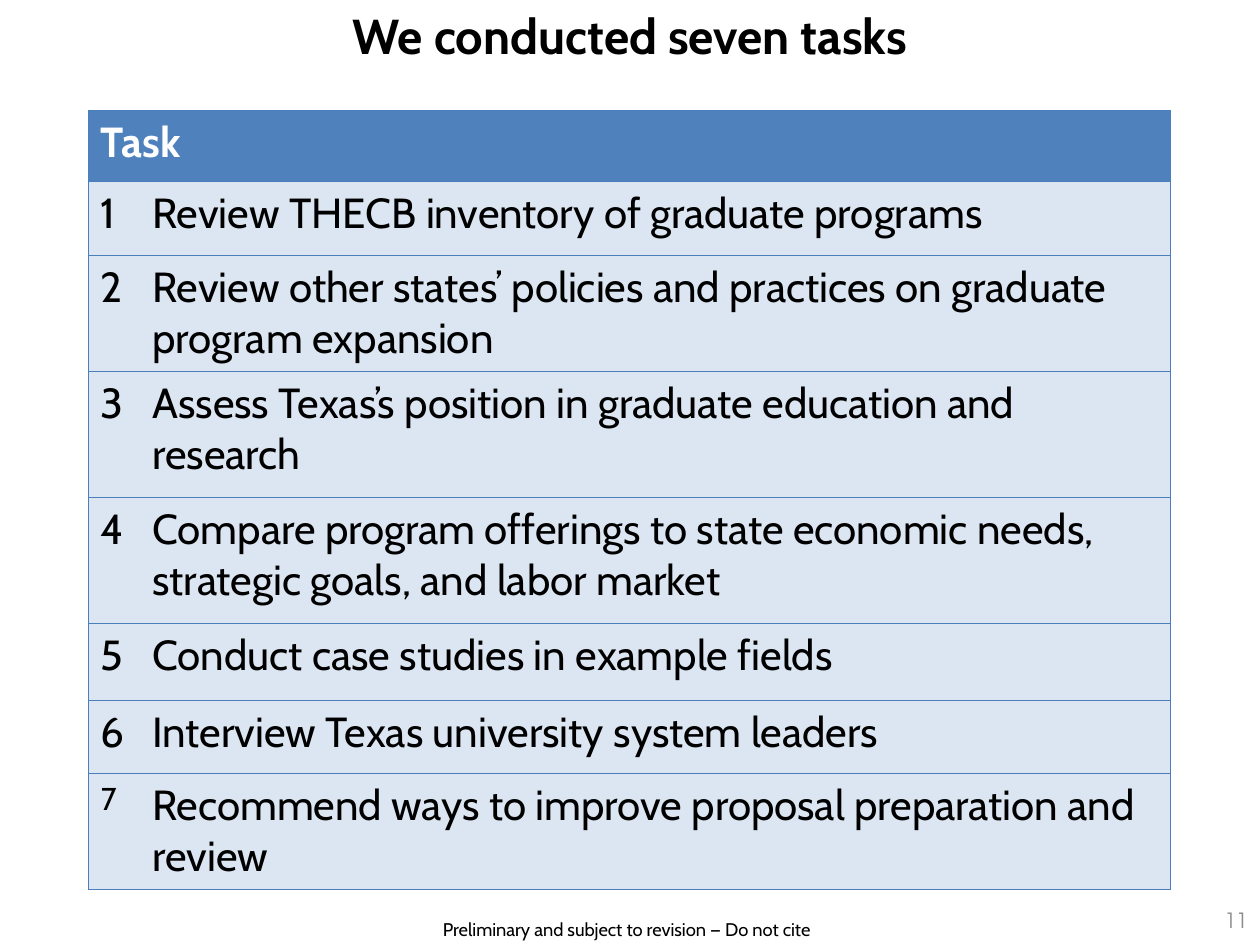
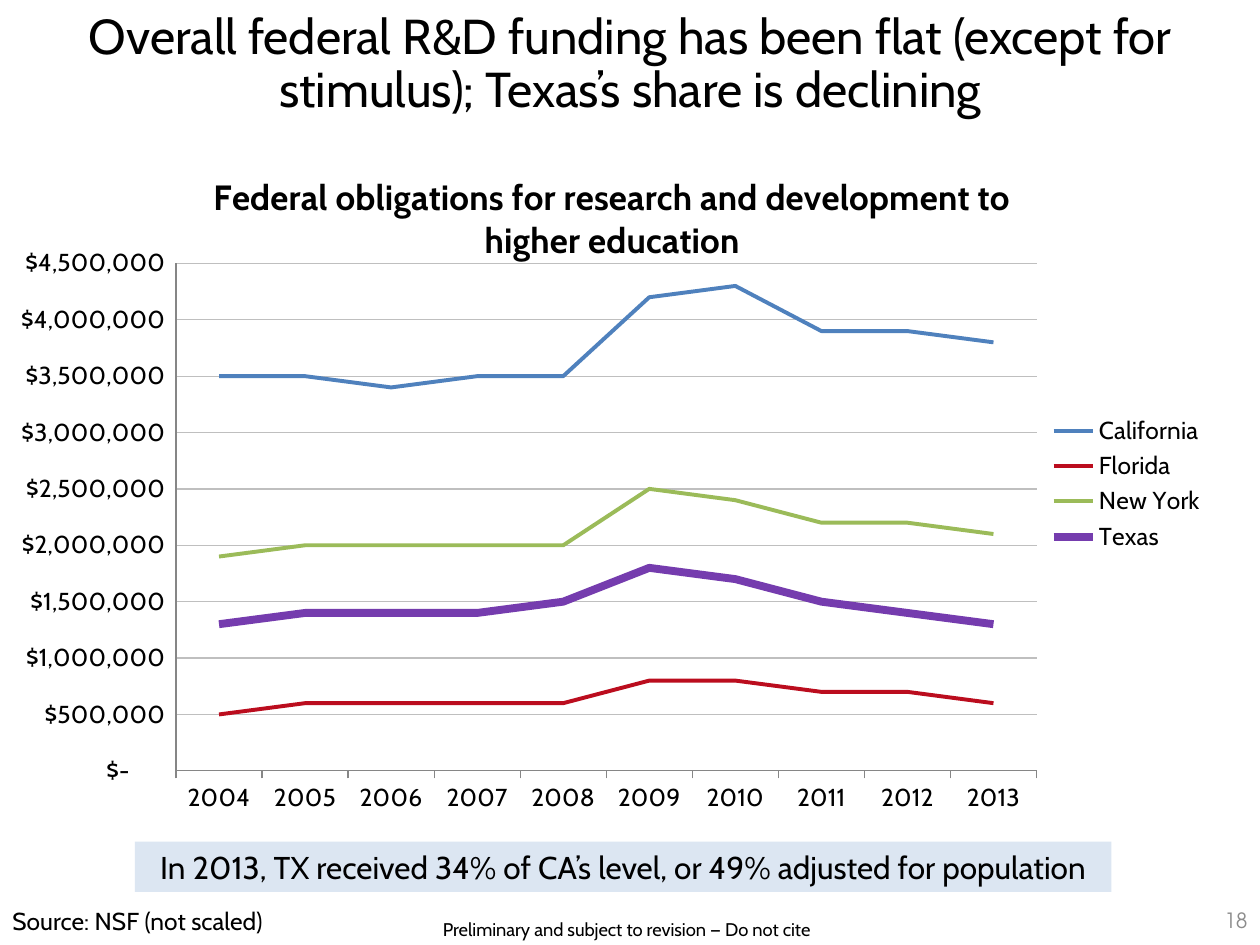
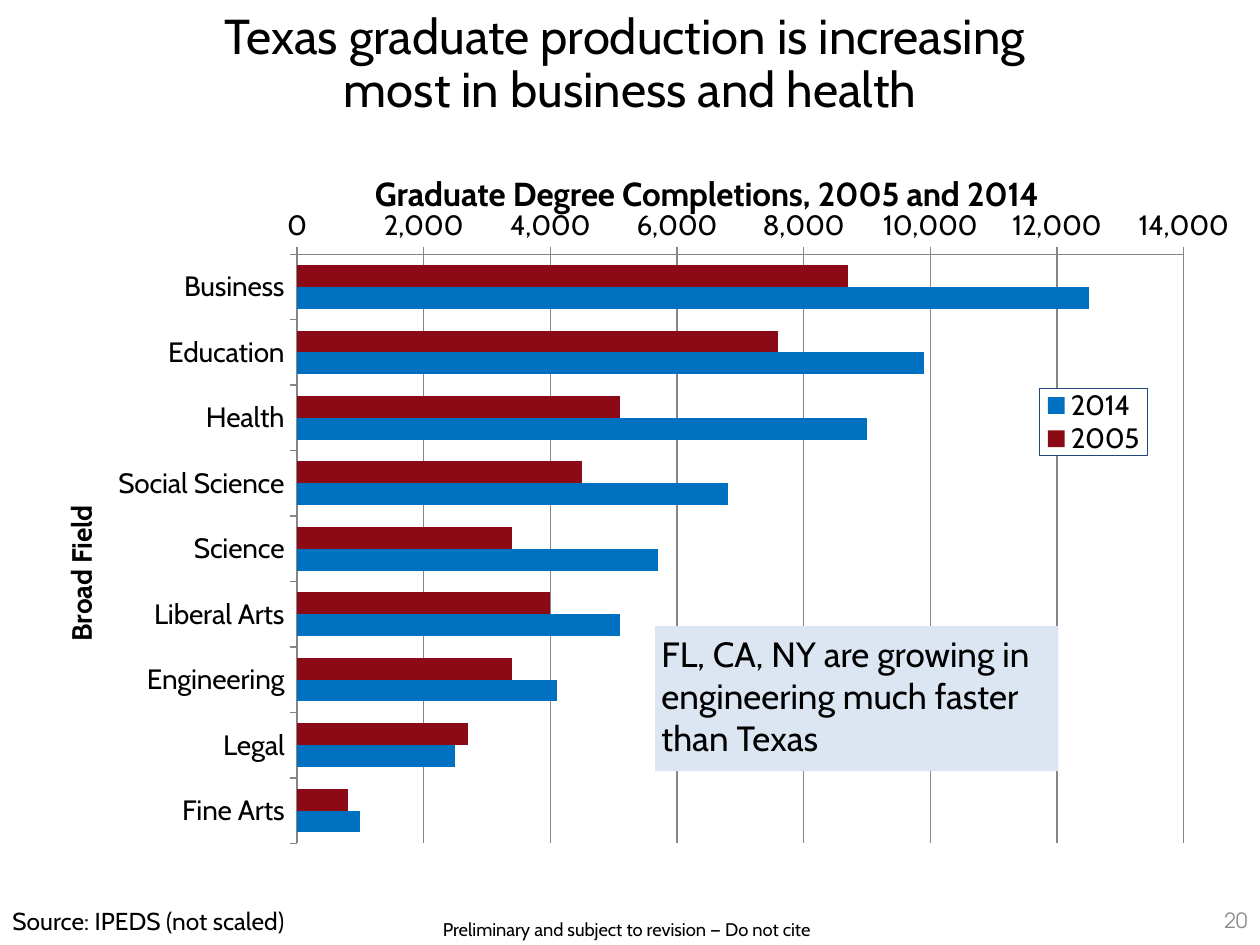
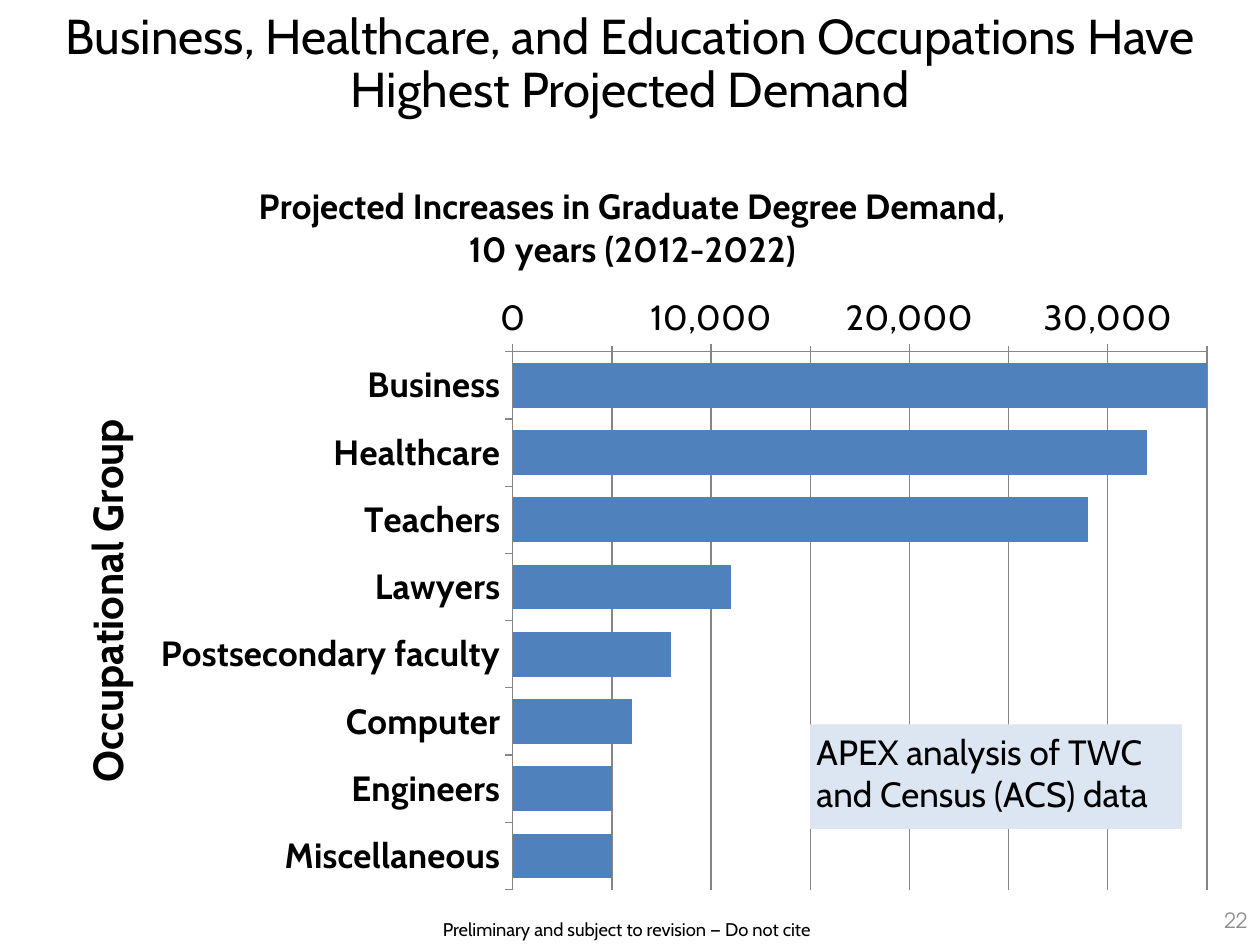
from copy import deepcopy
from dataclasses import dataclass

from pptx import Presentation
from pptx.chart.data import CategoryChartData
from pptx.dml.color import RGBColor
from pptx.enum.chart import XL_AXIS_CROSSES, XL_CHART_TYPE, XL_LEGEND_POSITION, XL_TICK_MARK
from pptx.enum.text import MSO_ANCHOR, PP_ALIGN
from pptx.oxml import parse_xml
from pptx.oxml.ns import qn, nsdecls
from pptx.util import Inches, Pt


@dataclass(frozen=True)
class Theme:
    font: str = "Cabin"
    number_font: str = "TeX Gyre Adventor"
    black: str = "000000"
    white: str = "FFFFFF"
    blue: str = "4F81BD"
    pale_blue: str = "DCE6F2"
    border: str = "4B7EBC"
    red: str = "BB0D1E"
    green: str = "9BBB59"
    purple: str = "753CAE"
    dark_red: str = "8C0A16"
    bright_blue: str = "0070C0"
    legend_border: str = "1F497D"
    number_grey: str = "8C8C8C"
    grid_light: str = "BFBFBF"
    grid_dark: str = "868686"
    title_size: float = 28
    table_size: float = 24
    callout_size: float = 20
    note_size: float = 18
    source_size: float = 14
    number_size: float = 12
    footer_size: float = 10.5


THEME = Theme()
FOOTER = "Preliminary and subject to revision — Do not cite"
DOLLARS = '_("$"* #,##0_);_("$"* \\(#,##0\\);_("$"* "-"??_);_(@_)'

TASKS = [
    # text, row height, number size
    ("Review THECB inventory of graduate programs", 0.59, 24),
    ("Review other states’ policies and practices on graduate program expansion", 0.92, 24),
    ("Assess Texas’s position in graduate education and research", 1, 24),
    ("Compare program offerings to state economic needs, strategic goals, and labor market", 1, 24),
    ("Conduct case studies in example fields", 0.61, 24),
    ("Interview Texas university system leaders", 0.58, 24),
    ("Recommend ways to improve proposal preparation and review", 0.92, 18),
]


# Formatting helpers
def apply(target, values):
    for name, value in values.items():
        setattr(target, name, value)


def set_font(font, size, color=THEME.black, bold=False, name=THEME.font):
    apply(font, {"size": Pt(size), "bold": bold, "name": name})
    font.color.rgb = RGBColor.from_string(color)


def set_line(line, color, width=0.75):
    line.color.rgb = RGBColor.from_string(color)
    line.width = Pt(width)


def set_fill(fill, color):
    fill.solid()
    fill.fore_color.rgb = RGBColor.from_string(color)


# Text elements
def add_text(slide, box, text, size, fill=None, insets=(0.1, 0.05, 0.1, 0.05),
             anchor=MSO_ANCHOR.TOP, paragraph_format=None, **font):
    shape = slide.shapes.add_textbox(*map(Inches, box))
    frame = shape.text_frame
    left, top, right, bottom = map(Inches, insets)
    apply(frame, {"word_wrap": True, "vertical_anchor": anchor, "margin_left": left,
                  "margin_top": top, "margin_right": right, "margin_bottom": bottom})
    if fill:
        set_fill(shape.fill, fill)
    paragraph = frame.paragraphs[0]
    paragraph.text = text
    apply(paragraph, paragraph_format or {})
    for run in paragraph.runs:
        set_font(run.font, size, **font)


def add_slide(presentation, title, number, bold=False):
    slide = presentation.slides.add_slide(presentation.slide_layouts[6])
    add_text(slide, (1.99, 7.24, 5.97, 0.28), FOOTER, THEME.footer_size,
             paragraph_format={"alignment": PP_ALIGN.CENTER})
    add_text(slide, (0, 0, 10, 0.99), title, THEME.title_size, bold=bold,
             insets=(0.2, 0.1, 0.2, 0.2),
             paragraph_format={"alignment": PP_ALIGN.CENTER, "line_spacing": 0.9})
    add_text(slide, (7.67, 7.1, 2.33, 0.4), str(number), THEME.number_size,
             anchor=MSO_ANCHOR.MIDDLE, color=THEME.number_grey, name=THEME.number_font,
             paragraph_format={"alignment": PP_ALIGN.RIGHT})
    return slide


def add_callout(slide, box, text):
    add_text(slide, box, text, THEME.callout_size, fill=THEME.pale_blue, insets=(0.05,) * 4,
             paragraph_format={"space_before": Pt(4)})


def add_source(slide, text):
    add_text(slide, (0, 7.14, 3.36, 0.34), text, THEME.source_size, fill=THEME.white)


# Task table
def set_borders(cell, visible_sides):
    properties = cell._tc.get_or_add_tcPr()
    for side in "LRTB":
        paint = "<a:noFill/>"
        if side in visible_sides:
            paint = f'<a:solidFill><a:srgbClr val="{THEME.border}"/></a:solidFill>'
        properties.append(parse_xml(f'<a:ln{side} {nsdecls("a")} w="{Pt(0.75)}">{paint}</a:ln{side}>'))


def fill_cell(cell, text, size, sides, fill=THEME.pale_blue, color=THEME.black, bold=False, space=0):
    set_borders(cell, sides)
    set_fill(cell.fill, fill)
    paragraph = cell.text_frame.paragraphs[0]
    paragraph.text = text
    apply(paragraph, {"space_before": Pt(space), "space_after": Pt(space)})
    set_font(paragraph.runs[0].font, size, color, bold)


def add_task_table(slide):
    heights = [0.56] + [height for _, height, _ in TASKS]
    frame = slide.shapes.add_table(len(heights), 2, *map(Inches, (0.7, 0.88, 8.59, sum(heights))))
    table = frame.table
    table.horz_banding = False
    for column, width in zip(table.columns, (0.41, 8.18)):
        column.width = Inches(width)
    for row, height in zip(table.rows, heights):
        row.height = Inches(height)
    header = table.cell(0, 0)
    header.merge(table.cell(0, 1))
    fill_cell(header, "Task", THEME.table_size, "LRTB", THEME.blue, THEME.white, bold=True)
    for number, (task, _, number_size) in enumerate(TASKS, 1):
        fill_cell(table.cell(number, 0), str(number), number_size, "LTB")
        fill_cell(table.cell(number, 1), task, THEME.table_size, "RTB", space=6)


# Charts
def set_layout(element, position, x, y, width=None, height=None, inner=False):
    for old in element.findall(qn("c:layout")):
        element.remove(old)
    values = {"xMode": "edge", "yMode": "edge", "x": x, "y": y}
    if inner:
        values = {"layoutTarget": "inner", **values}
    if width:
        values.update(w=width, h=height)
    items = "".join(f'<c:{name} val="{value}"/>' for name, value in values.items())
    element.insert(position, parse_xml(
        f'<c:layout {nsdecls("c")}><c:manualLayout>{items}</c:manualLayout></c:layout>'))


def set_title(title, text, size, place=None):
    title.text_frame.text = text
    for paragraph in title.text_frame.paragraphs:
        for run in paragraph.runs:
            set_font(run.font, size, bold=True)
    if place:
        set_layout(title._element, 1, *place)


def add_chart(slide, kind, box, categories, series, size, title, title_size, plot_box,
              title_place=None):
    data = CategoryChartData()
    data.categories = categories
    for name, values, _ in series:
        data.add_series(name, values)
    chart = slide.shapes.add_chart(kind, *map(Inches, box), data).chart
    set_font(chart.font, size)
    chart.has_title = True
    set_title(chart.chart_title, title, title_size, title_place)
    chart.has_legend = len(series) > 1
    if chart.has_legend:
        apply(chart.legend, {"position": XL_LEGEND_POSITION.RIGHT, "include_in_layout": False})
    chart.plots[0].vary_by_categories = False
    set_layout(chart._chartSpace.chart.plotArea, 0, *plot_box, inner=True)
    for axis in (chart.category_axis, chart.value_axis):
        axis.major_tick_mark = XL_TICK_MARK.OUTSIDE
        set_line(axis.format.line, THEME.grid_dark)
    return chart


def format_value_axis(axis, maximum, unit, number_format, grid_color):
    apply(axis, {"minimum_scale": 0, "maximum_scale": maximum, "major_unit": unit,
                 "has_major_gridlines": True})
    apply(axis.tick_labels, {"number_format": number_format, "number_format_is_linked": False})
    set_line(axis.major_gridlines.format.line, grid_color)


def add_minor_grid(axis, unit):
    apply(axis, {"minor_unit": unit, "has_minor_gridlines": True,
                 "minor_tick_mark": XL_TICK_MARK.OUTSIDE})
    # Minor gridlines take the line format of the major ones
    line_format = axis._element.find(qn("c:majorGridlines")).find(qn("c:spPr"))
    axis._element.find(qn("c:minorGridlines")).append(deepcopy(line_format))


def add_bar_chart(slide, box, categories, series, size, gap, axis_title, axis_title_size,
                  axis_title_place, **options):
    chart = add_chart(slide, XL_CHART_TYPE.BAR_CLUSTERED, box, categories, series, size, **options)
    apply(chart.plots[0], {"gap_width": gap, "overlap": 0})
    for bars, (_, _, color) in zip(chart.series, series):
        set_fill(bars.format.fill, color)
    axis = chart.category_axis
    axis.reverse_order = True
    set_title(axis.axis_title, axis_title, axis_title_size, axis_title_place)
    return chart


def add_funding_chart(slide):
    series = [
        ("California", [3500000, 3500000, 3400000, 3500000, 3500000,
                        4200000, 4300000, 3900000, 3900000, 3800000], THEME.blue),
        ("Florida", [500000, 600000, 600000, 600000, 600000,
                     800000, 800000, 700000, 700000, 600000], THEME.red),
        ("New York", [1900000, 2000000, 2000000, 2000000, 2000000,
                      2500000, 2400000, 2200000, 2200000, 2100000], THEME.green),
        ("Texas", [1300000, 1400000, 1400000, 1400000, 1500000,
                   1800000, 1700000, 1500000, 1400000, 1300000], THEME.purple),
    ]
    chart = add_chart(
        slide, XL_CHART_TYPE.LINE, (0.05, 1.19, 9.62, 5.3),
        [str(year) for year in range(2004, 2014)], series, 14,
        "Federal obligations for research and development to\nhigher education", 20,
        (0.14, 0.17, 0.71, 0.76))
    for line, (name, _, color) in zip(chart.series, series):
        line.smooth = False
        set_line(line.format.line, color, 4.5 if name == "Texas" else 2.25)
    format_value_axis(chart.value_axis, 4500000, 500000, DOLLARS, THEME.grid_light)
    chart.value_axis.major_tick_mark = XL_TICK_MARK.NONE


def add_completions_chart(slide):
    fields = ["Business", "Education", "Health", "Social Science", "Science",
              "Liberal Arts", "Engineering", "Legal", "Fine Arts"]
    series = [
        ("2005", [8700, 7600, 5100, 4500, 3400, 4000, 3400, 2700, 800], THEME.dark_red),
        ("2014", [12500, 9900, 9000, 6800, 5700, 5100, 4100, 2500, 1000], THEME.bright_blue),
    ]
    chart = add_bar_chart(
        slide, (0.36, 1.13, 9.51, 5.92), fields, series, 16, 100, "Broad Field", 16, (0.01, 0.48),
        title="Graduate Degree Completions, 2005 and 2014", title_size=19,
        title_place=(0.27, 0.03), plot_box=(0.21, 0.15, 0.74, 0.79))
    format_value_axis(chart.value_axis, 14000, 2000, "#,##0", THEME.grid_dark)
    chart.category_axis.crosses = XL_AXIS_CROSSES.MAXIMUM
    # Framed legend inside the plot
    legend = chart.legend._element
    set_layout(legend, 1, 0.83, 0.33, 0.09, 0.09)
    legend.append(parse_xml(
        f'<c:spPr {nsdecls("c", "a")}><a:solidFill><a:srgbClr val="{THEME.white}"/></a:solidFill>'
        f'<a:ln w="{Pt(0.75)}"><a:solidFill><a:srgbClr val="{THEME.legend_border}"/>'
        '</a:solidFill></a:ln></c:spPr>'))


def add_demand_chart(slide):
    groups = ["Business", "Healthcare", "Teachers", "Lawyers", "Postsecondary faculty",
              "Computer", "Engineers", "Miscellaneous"]
    series = [("Series 1", [35000, 32000, 29000, 11000, 8000, 6000, 5000, 5000], THEME.blue)]
    chart = add_bar_chart(
        slide, (0.27, 1.25, 9.5, 5.93), groups, series, 20, 50,
        "Occupational Group", 24, (0.03, 0.34),
        title="Projected Increases in Graduate Degree Demand,\n10 years (2012-2022)",
        title_size=20, plot_box=(0.4, 0.26, 0.58, 0.72))
    set_font(chart.category_axis.tick_labels.font, 20, bold=True)
    format_value_axis(chart.value_axis, 35000, 10000, "#,##0", THEME.grid_dark)
    add_minor_grid(chart.value_axis, 5000)


def main():
    presentation = Presentation()
    apply(presentation, {"slide_width": Inches(10), "slide_height": Inches(7.5)})

    # Tasks
    slide = add_slide(presentation, "We conducted seven tasks", 11, bold=True)
    add_task_table(slide)

    # Federal funding
    slide = add_slide(presentation, "Overall federal R&D funding has been flat (except for "
                      "stimulus); Texas’s share is declining", 18)
    add_funding_chart(slide)
    add_text(slide, (1.07, 6.68, 7.75, 0.4),
             "In 2013, TX received 34% of CA’s level, or 49% adjusted for population",
             THEME.note_size, fill=THEME.pale_blue,
             paragraph_format={"alignment": PP_ALIGN.CENTER})
    add_source(slide, "Source: NSF (not scaled)")

    # Graduate production
    slide = add_slide(presentation, "Texas graduate production is increasing \v"
                      "most in business and health", 20)
    add_completions_chart(slide)
    add_callout(slide, (5.2, 4.97, 3.2, 1.15),
                "FL, CA, NY are growing in engineering much faster than Texas")
    add_source(slide, "Source: IPEDS (not scaled)")

    # Projected demand
    slide = add_slide(presentation, "Business, Healthcare, and Education Occupations Have "
                      "Highest Projected Demand", 22)
    add_demand_chart(slide)
    add_callout(slide, (6.43, 5.75, 2.95, 0.83), "APEX analysis of TWC and Census (ACS) data")

    presentation.save("out.pptx")


if __name__ == "__main__":
    main()
